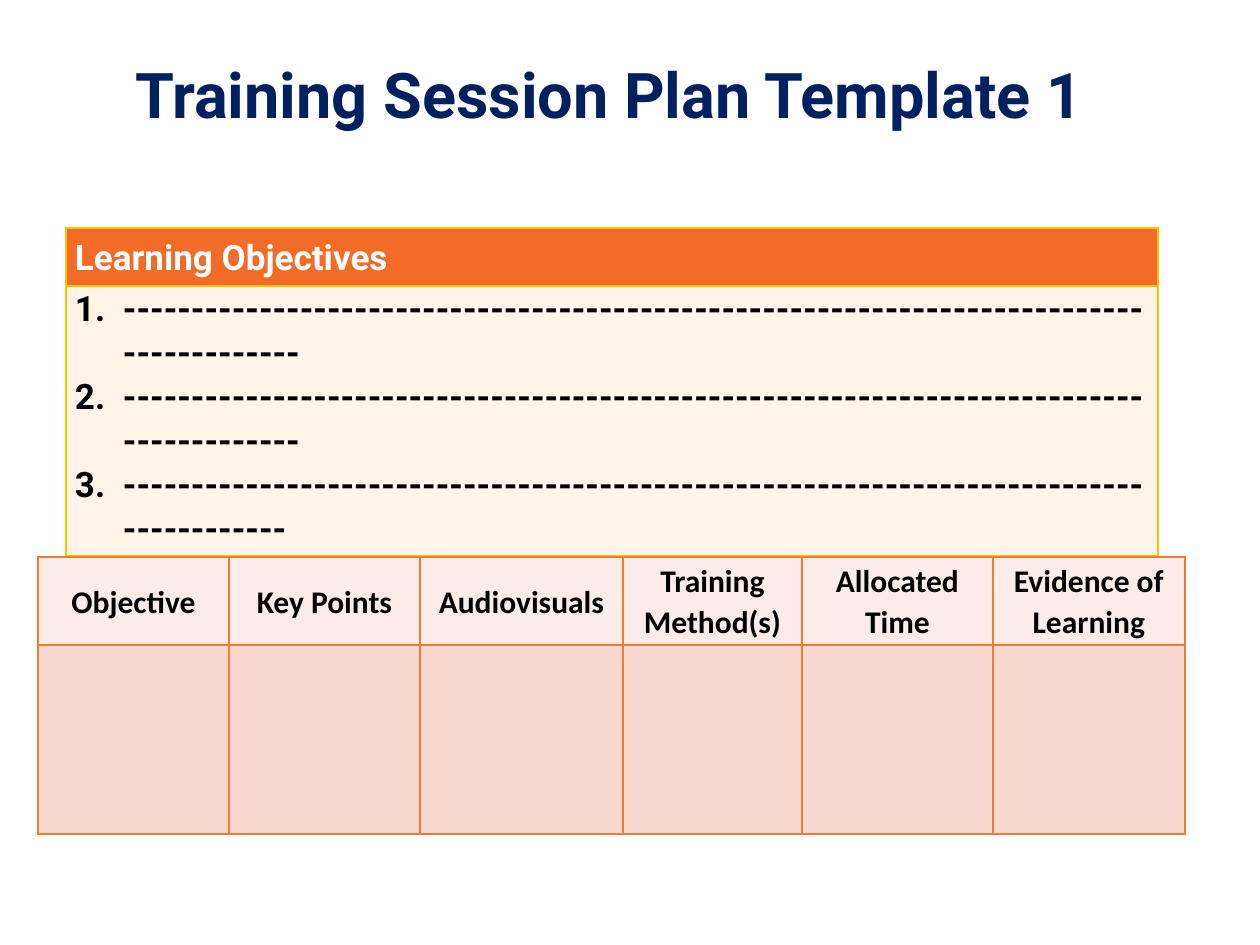
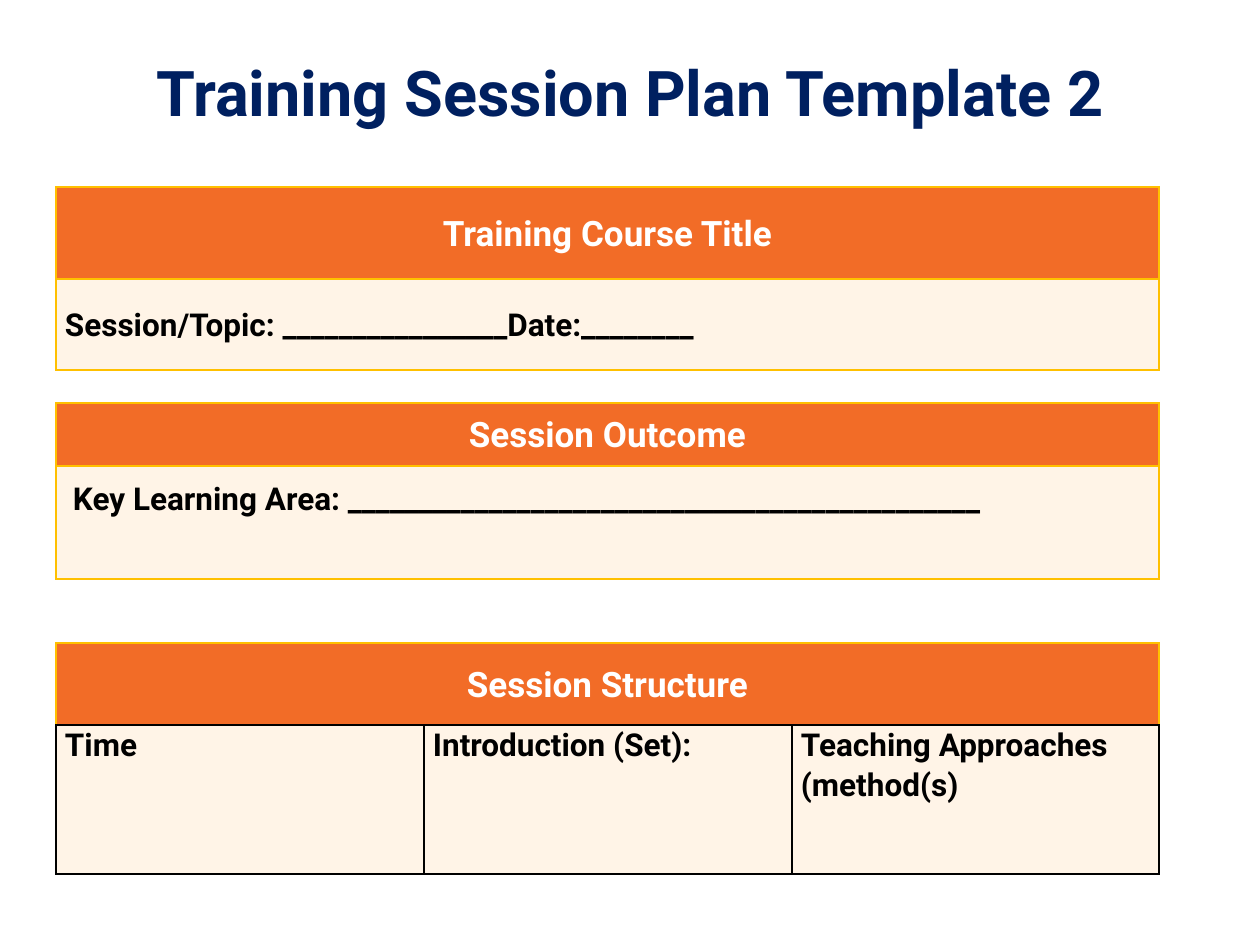
from dataclasses import dataclass, replace
from typing import Optional

from lxml.etree import SubElement
from pptx import Presentation
from pptx.dml.color import RGBColor
from pptx.enum.text import MSO_ANCHOR, MSO_AUTO_SIZE, PP_ALIGN
from pptx.oxml.ns import qn
from pptx.slide import Slide
from pptx.table import _Cell
from pptx.text.text import _Paragraph
from pptx.util import Emu, Pt

PX_PER_INCH = 126
COLORS = {
    "navy": "002060",
    "orange": "F26C27",
    "cream": "FFF4E7",
    "gold": "FFC000",
    "rust": "ED7D31",
    "blush": "FCECE8",
    "rose": "F8D7CE",
    "white": "FFFFFF",
    "black": "000000",
}


@dataclass(frozen=True)
class CellStyle:
    fill: str
    border: str
    color: str = "black"
    font: str = "Roboto"
    size: int = 18
    align: PP_ALIGN = PP_ALIGN.LEFT
    anchor: MSO_ANCHOR = MSO_ANCHOR.MIDDLE
    left_margin: int = 9
    top_margin: int = 0
    list_indent: int = 0
    bottom_border: Optional[str] = None


@dataclass(frozen=True)
class Row:
    height: int
    style: CellStyle
    cells: list[list[str]]


@dataclass(frozen=True)
class TableSpec:
    left: int
    top: int
    columns: list[int]
    rows: list[Row]


@dataclass(frozen=True)
class SlideSpec:
    title: str
    title_box: tuple[int, int, int, int]
    tables: list[TableSpec]


BAND = CellStyle("orange", "gold", color="white", size=20, align=PP_ALIGN.CENTER)
BODY = CellStyle("cream", "gold")
OBJECTIVES = replace(BODY, size=20, anchor=MSO_ANCHOR.TOP, list_indent=48)
OUTCOME = replace(BODY, anchor=MSO_ANCHOR.TOP, left_margin=17, top_margin=13)
STRUCTURE = replace(BODY, border="black", anchor=MSO_ANCHOR.TOP)
PLAN_HEADER = CellStyle("blush", "rust", font="Calibri", align=PP_ALIGN.CENTER)
PLAN_BODY = replace(PLAN_HEADER, fill="rose")

PLAN_HEADINGS = ["Objective", "Key Points", "Audiovisuals", "Training Method(s)",
                 "Allocated Time", "Evidence of Learning"]
STRUCTURE_HEADINGS = ["Time", "Introduction (Set):", "Teaching Approaches (method(s)"]
FORM_LEFT = 56
FORM_WIDTH = 1103

SLIDES = [
    SlideSpec("Training Session Plan Template 1", (66, 40, 1086, 117), [
        TableSpec(66, 228, [1092], [
            Row(58, replace(BAND, align=PP_ALIGN.LEFT), [["Learning Objectives"]]),
            Row(270, OBJECTIVES, [["-" * count for count in (88, 88, 87)]]),
        ]),
        TableSpec(38, 557, [191, 191, 203, 179, 191, 192], [
            Row(88, PLAN_HEADER, [[heading] for heading in PLAN_HEADINGS]),
            Row(189, PLAN_BODY, [[] for _ in PLAN_HEADINGS]),
        ]),
    ]),
    SlideSpec("Training Session Plan Template 2", (87, 5, 1086, 183), [
        TableSpec(FORM_LEFT, 187, [FORM_WIDTH], [
            Row(92, BAND, [["Training Course Title"]]),
            Row(91, BODY, [["Session/Topic: " + "_" * 16 + "Date:" + "_" * 8]]),
        ]),
        TableSpec(FORM_LEFT, 403, [FORM_WIDTH], [
            Row(63, BAND, [["Session Outcome"]]),
            Row(113, OUTCOME, [["Key Learning Area: " + "_" * 45]]),
        ]),
        TableSpec(FORM_LEFT, 643, [368, 368, 367], [
            Row(82, replace(BAND, bottom_border="black"), [["Session Structure"]]),
            Row(149, STRUCTURE, [[heading] for heading in STRUCTURE_HEADINGS]),
        ]),
    ]),
]


def px(length: int) -> Emu:
    return Emu(round(length * 914400 / PX_PER_INCH))


def rgb(name: str) -> RGBColor:
    return RGBColor.from_string(COLORS[name])


def add_run(paragraph: _Paragraph, text: str, font: str, size: int, color: str) -> None:
    run = paragraph.add_run()
    run.text = text
    run.font.name = font
    run.font.size = Pt(size)
    run.font.bold = True
    run.font.color.rgb = rgb(color)


def number_paragraph(paragraph: _Paragraph, indent: int) -> None:
    properties = paragraph._p.get_or_add_pPr()
    properties.set("marL", str(px(indent)))
    properties.set("indent", str(-px(indent)))
    SubElement(properties, qn("a:buFont"), typeface="+mj-lt")
    SubElement(properties, qn("a:buAutoNum"), type="arabicPeriod")


def format_cell(cell: _Cell, style: CellStyle) -> None:
    cell.margin_left = px(style.left_margin)
    cell.margin_right = px(9)
    cell.margin_top = px(style.top_margin)
    cell.margin_bottom = 0
    cell.vertical_anchor = style.anchor
    properties = cell._tc.get_or_add_tcPr()
    for side in ("lnL", "lnR", "lnT", "lnB"):
        color = style.bottom_border if side == "lnB" and style.bottom_border else style.border
        line = SubElement(properties, qn(f"a:{side}"), w=str(Pt(1)))
        SubElement(SubElement(line, qn("a:solidFill")), qn("a:srgbClr"), val=COLORS[color])
    cell.fill.solid()
    cell.fill.fore_color.rgb = rgb(style.fill)


def write_cell(cell: _Cell, texts: list[str], style: CellStyle) -> None:
    frame = cell.text_frame
    for index, text in enumerate(texts):
        paragraph = frame.add_paragraph() if index else frame.paragraphs[0]
        paragraph.alignment = style.align
        paragraph.line_spacing = 1.07
        if style.list_indent:
            number_paragraph(paragraph, style.list_indent)
        add_run(paragraph, text, style.font, style.size, style.color)


def draw_table(slide: Slide, spec: TableSpec) -> None:
    width = sum(spec.columns)
    height = sum(row.height for row in spec.rows)
    table = slide.shapes.add_table(len(spec.rows), len(spec.columns), px(spec.left),
                                   px(spec.top), px(width), px(height)).table
    table.first_row = False
    table.horz_banding = False
    for column, column_width in zip(table.columns, spec.columns):
        column.width = px(column_width)
    for row_index, row in enumerate(spec.rows):
        table.rows[row_index].height = px(row.height)
        for column_index in range(len(spec.columns)):
            format_cell(table.cell(row_index, column_index), row.style)
        if len(row.cells) < len(spec.columns):
            last_cell = table.cell(row_index, len(spec.columns) - 1)
            table.cell(row_index, 0).merge(last_cell)
        for column_index, texts in enumerate(row.cells):
            write_cell(table.cell(row_index, column_index), texts, row.style)


def draw_title(slide: Slide, text: str, box: tuple[int, int, int, int]) -> None:
    title = slide.shapes.title
    title.left, title.top, title.width, title.height = map(px, box)
    frame = title.text_frame
    frame.auto_size = MSO_AUTO_SIZE.NONE
    frame.vertical_anchor = MSO_ANCHOR.MIDDLE
    paragraph = frame.paragraphs[0]
    paragraph.alignment = PP_ALIGN.CENTER
    paragraph.line_spacing = 0.9
    add_run(paragraph, text, "Roboto", 36, "navy")


def main() -> None:
    presentation = Presentation()
    presentation.slide_width = px(1260)
    presentation.slide_height = px(945)
    title_only = presentation.slide_layouts[5]
    for spec in SLIDES:
        slide = presentation.slides.add_slide(title_only)
        draw_title(slide, spec.title, spec.title_box)
        for table in spec.tables:
            draw_table(slide, table)
    presentation.save("out.pptx")


if __name__ == "__main__":
    main()
